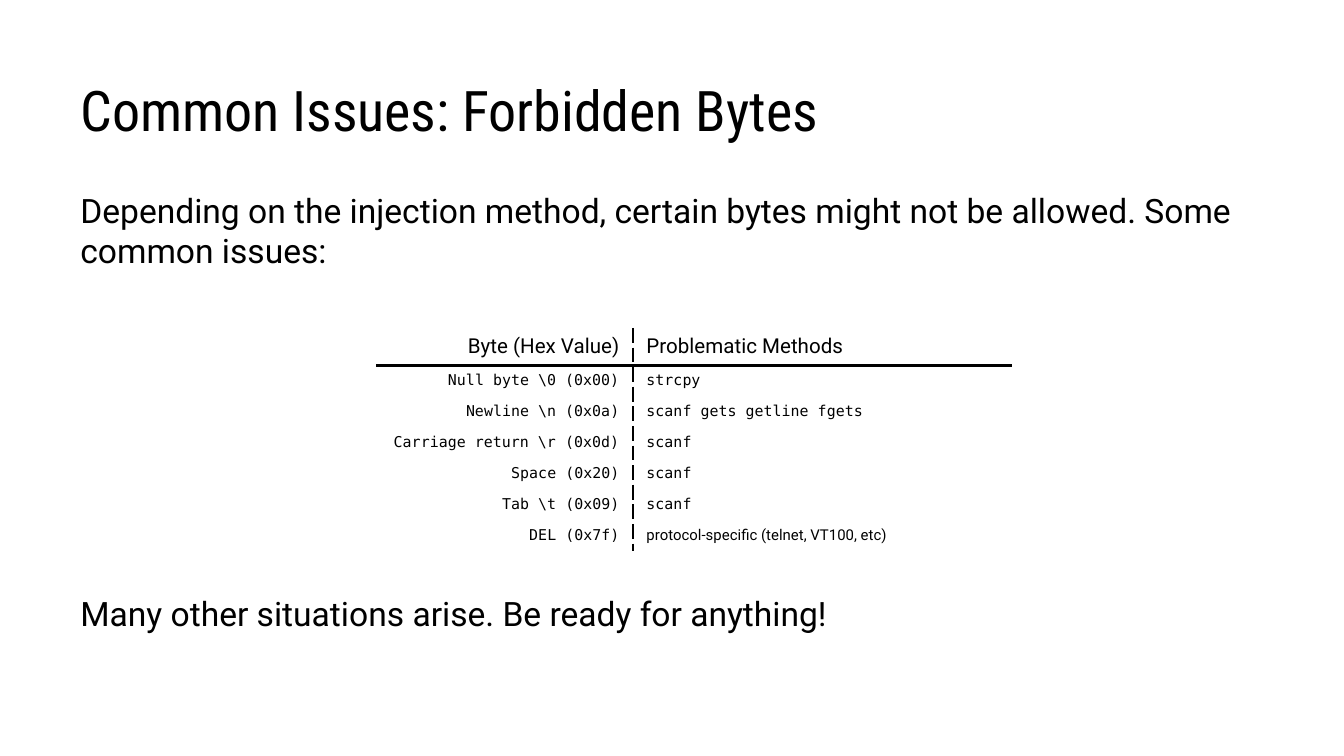
from pptx import Presentation
from pptx.dml.color import RGBColor
from pptx.enum.text import MSO_ANCHOR, MSO_AUTO_SIZE, PP_ALIGN
from pptx.oxml import parse_xml
from pptx.oxml.ns import nsdecls
from pptx.util import Inches, Pt

BLACK = RGBColor(0, 0, 0)
LEFT, RIGHT = PP_ALIGN.LEFT, PP_ALIGN.RIGHT
TOP, BOTTOM = MSO_ANCHOR.TOP, MSO_ANCHOR.BOTTOM
NO_AUTOFIT = MSO_AUTO_SIZE.NONE
SANS, CONDENSED, MONO = "Roboto", "Roboto Condensed", "DejaVu Sans Mono"

TITLE = "Common Issues: Forbidden Bytes"
INTRO = ("Depending on the injection method, certain bytes might not be allowed. "
         "Some common issues:")
CLOSING = "Many other situations arise. Be ready for anything!"
HEADER = ("Byte (Hex Value)", "Problematic Methods")
ISSUES = [
    ("Null byte \\0 (0x00)", "strcpy"),
    ("Newline \\n (0x0a)", "scanf gets getline fgets"),
    ("Carriage return \\r (0x0d)", "scanf"),
    ("Space (0x20)", "scanf"),
    ("Tab \\t (0x09)", "scanf"),
    ("DEL (0x7f)", "protocol-specific (telnet, VT100, etc)"),
]
COLUMN_WIDTHS = (1.91, 2.82)
HEADER_HEIGHT, ROW_HEIGHT = 0.27, 0.23


def write(para, text, size=18, font=SANS, align=LEFT, space_before=0):
    """Fill a paragraph with one formatted span of text."""
    para.alignment = align
    para.space_before = Pt(space_before)
    span = para.add_run()
    span.text = text
    span.font.size = Pt(size)
    span.font.name = font
    span.font.color.rgb = BLACK


def set_frame(box, anchor):
    """Give a text box even margins, wrapping and a vertical anchor."""
    frame = box.text_frame
    frame.word_wrap = True
    frame.auto_size = NO_AUTOFIT
    frame.vertical_anchor = anchor
    frame.margin_left = frame.margin_right = Inches(0.1)
    frame.margin_top = frame.margin_bottom = Inches(0.1)
    return frame


def add_title(page):
    """Place and fill the title placeholder."""
    title = page.shapes.title
    title.left, title.top = Inches(0.5), Inches(0.22)
    title.width, title.height = Inches(9), Inches(0.94)
    write(set_frame(title, BOTTOM).paragraphs[0], TITLE, size=30, font=CONDENSED)


def add_body(page):
    """Add the text that stands above and below the table."""
    box = page.shapes.add_textbox(Inches(0.5), Inches(1.31), Inches(9), Inches(4.07))
    frame = set_frame(box, TOP)
    write(frame.paragraphs[0], INTRO)
    write(frame.add_paragraph(), CLOSING, space_before=173)


def set_borders(cell, **borders):
    """Draw the given (points, dash) borders of a cell and hide the others."""
    properties = cell._tc.get_or_add_tcPr()
    for side in "LRTB":
        points, dash = borders.get(side, (0, "solid"))
        paint = (f'<a:solidFill><a:srgbClr val="{BLACK}"/></a:solidFill>'
                 f'<a:prstDash val="{dash}"/>') if points else "<a:noFill/>"
        properties.append(parse_xml(
            f'<a:ln{side} {nsdecls("a")} w="{Pt(points)}">{paint}</a:ln{side}>'))


def fill_cell(cell, text, row, column):
    """Write one table cell and draw the rules it touches."""
    is_prose = row == 0 or text.startswith("protocol")
    write(cell.text_frame.paragraphs[0], text, size=8 if row else 11,
          font=SANS if is_prose else MONO, align=LEFT if column else RIGHT)
    borders = {"L" if column else "R": (0.75, "dash")}
    if row < 2:
        borders["T" if row else "B"] = (1.5, "solid")
    set_borders(cell, **borders)
    cell.fill.background()


def add_issue_table(page):
    """Add the table of forbidden bytes."""
    rows = [HEADER, *ISSUES]
    height = HEADER_HEIGHT + ROW_HEIGHT * len(ISSUES)
    table = page.shapes.add_table(
        len(rows), len(HEADER), Inches(2.8), Inches(2.44),
        Inches(sum(COLUMN_WIDTHS)), Inches(height)).table
    table.first_row = table.horz_banding = False
    for column, width in zip(table.columns, COLUMN_WIDTHS):
        column.width = Inches(width)
    for row, texts in enumerate(rows):
        table.rows[row].height = Inches(ROW_HEIGHT if row else HEADER_HEIGHT)
        for column, text in enumerate(texts):
            fill_cell(table.cell(row, column), text, row, column)


def main():
    """Build the 16:9 slide and save the deck."""
    deck = Presentation()
    deck.slide_width = Inches(10)
    deck.slide_height = Inches(10 * 9 / 16)
    page = deck.slides.add_slide(deck.slide_layouts[5])
    add_title(page)
    add_body(page)
    add_issue_table(page)
    deck.save("out.pptx")


if __name__ == "__main__":
    main()
